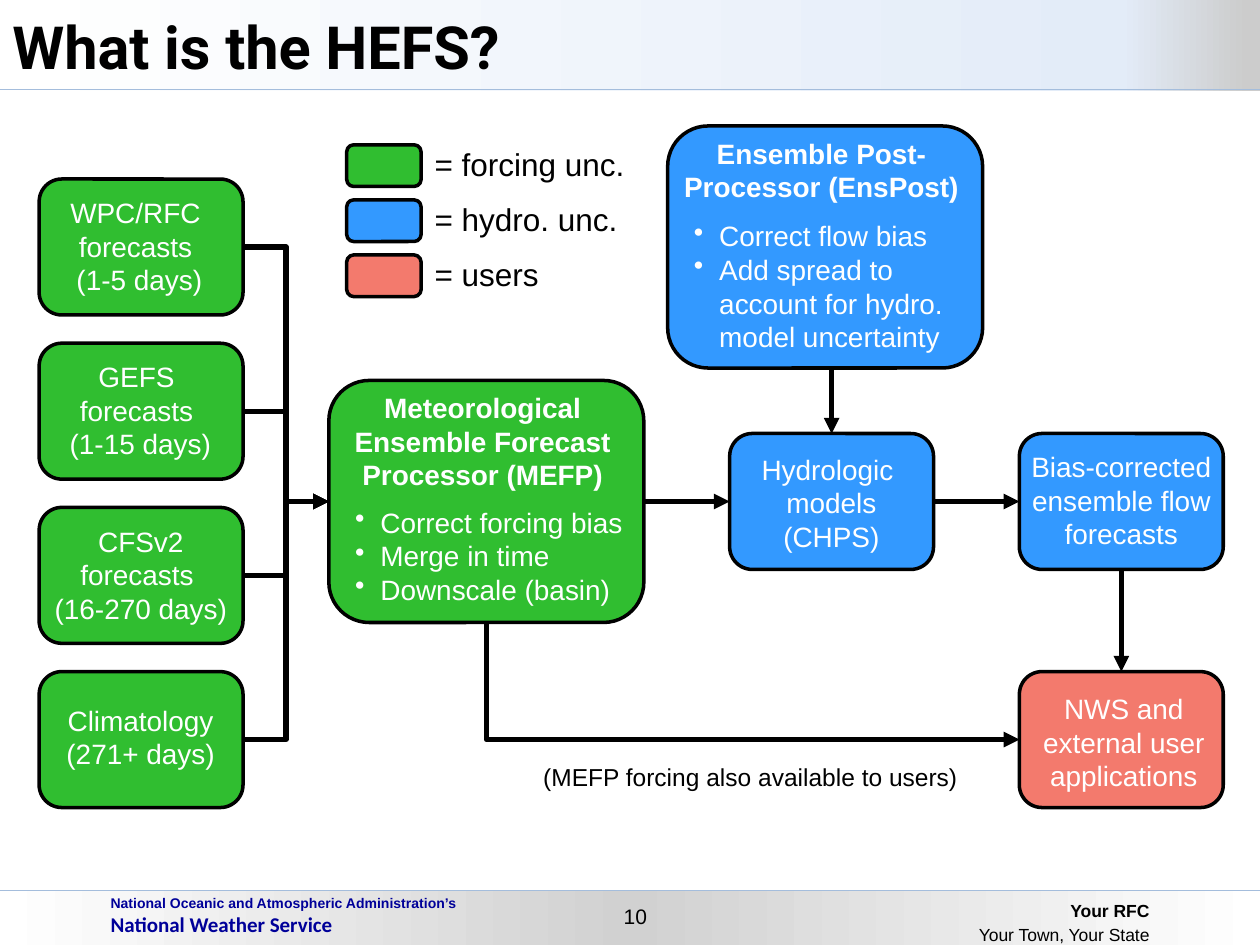
from copy import deepcopy

from lxml.etree import SubElement
from pptx import Presentation
from pptx.dml.color import RGBColor
from pptx.enum.shapes import MSO_CONNECTOR, MSO_SHAPE
from pptx.enum.text import MSO_ANCHOR, PP_ALIGN
from pptx.oxml.ns import qn
from pptx.util import Cm, Pt

COLORS = {
    "forcing": "30BE30", "hydro": "3399FF", "users": "F37A6D",
    "black": "000000", "white": "FFFFFF", "navy": "000099", "rule": "A4BDDC",
    "silver": "D1D1D1", "ice": "E3ECF8", "gray": "CCCCCC",
}
RGB = {name: RGBColor.from_string(value) for name, value in COLORS.items()}
LEFT, CENTER, RIGHT = PP_ALIGN.LEFT, PP_ALIGN.CENTER, PP_ALIGN.RIGHT

prs = Presentation()
prs.slide_width, prs.slide_height = Cm(25.4), Cm(19.05)
slide = prs.slides.add_slide(prs.slide_layouts[6])
shapes = slide.shapes


def add_node(color, left, top, width=4.11, height=2.74):
    node = shapes.add_shape(MSO_SHAPE.ROUNDED_RECTANGLE, Cm(left), Cm(top), Cm(width), Cm(height))
    node.shadow.inherit = False
    node.fill.solid()
    node.fill.fore_color.rgb = RGB[color]
    node.line.color.rgb = RGB["black"]
    node.line.width = Pt(2)
    return node


def add_label(text, left, top, width, height, size=16, color="white", bold=False,
              align=CENTER, font="Arial", wrap=True, bullets=False):
    frame = shapes.add_textbox(Cm(left), Cm(top), Cm(width), Cm(height)).text_frame
    frame.word_wrap = wrap
    frame.text = text
    for paragraph in frame.paragraphs:
        paragraph.alignment = align
        if bullets:
            properties = paragraph._p.get_or_add_pPr()
            properties.set("marL", str(Cm(0.51)))
            properties.set("indent", str(-Cm(0.51)))
            SubElement(properties, qn("a:buChar")).set("char", "•")
        for run in paragraph.runs:
            run.font.name = font
            run.font.size = Pt(size)
            run.font.bold = bold
            run.font.color.rgb = RGB[color]
    return frame


bands = [
    (0, 1.83, 1.8, [(0, "white"), (0.89, "ice"), (0.99, "gray")]),
    (17.95, 1.1, 17.95, [(0, "white"), (0.5, "silver"), (1, "white")]),
]
for top, height, rule_y, stops in bands:
    band = shapes.add_shape(MSO_SHAPE.RECTANGLE, 0, Cm(top), prs.slide_width, Cm(height))
    band.shadow.inherit = False
    band.line.fill.background()
    band.fill.gradient()
    band.fill.gradient_angle = 0
    stop_list = band._element.xpath(".//a:gsLst")[0]
    stop_list.append(deepcopy(stop_list[0]))
    for stop, (position, color) in zip(band.fill.gradient_stops, stops):
        stop.position = position
        stop.color.rgb = RGB[color]
    rule = shapes.add_connector(MSO_CONNECTOR.STRAIGHT, prs.slide_width, Cm(rule_y), 0, Cm(rule_y))
    rule.line.color.rgb = RGB["rule"]
    rule.line.width = Pt(0.75)
    SubElement(rule._element.spPr, qn("a:effectLst"))

title = add_label("What is the HEFS?", 0, 0, 25.4, 1.83, 34, "black", True, LEFT, "Roboto")
title.vertical_anchor = MSO_ANCHOR.MIDDLE

agency = add_label("National Oceanic and Atmospheric Administration’s\nNational Weather Service",
                   1.98, 17.91, 8.46, 1.09, 8, "navy", True, LEFT)
service = agency.paragraphs[1].runs[0].font
service.name, service.size = "Calibri", Pt(12)
add_label("10", 12.29, 18.08, 1.04, 0.76, 12, "black", wrap=False)
office = add_label("Your RFC\nYour Town, Your State", 17.5, 17.95, 5.92, 1.12, 10, "black", align=RIGHT)
office.paragraphs[0].runs[0].font.bold = True
for paragraph in office.paragraphs:
    paragraph.line_spacing = 1.15

applications = add_node("users", 20.55, 13.54)
flow_forecasts = add_node("hydro", 20.55, 8.74)
hydro_models = add_node("hydro", 14.71, 8.74)
mefp = add_node("forcing", 6.63, 7.67, 6.35, 4.88)
enspost = add_node("hydro", 13.46, 2.54, 6.35, 4.88)

add_label("Hydrologic \nmodels (CHPS)", 14.88, 8.99, 3.76, 2.31)
add_label("Bias-corrected ensemble flow forecasts", 20.47, 8.94, 4.27, 2.31)
add_label("NWS and external user applications", 20.52, 13.82, 4.27, 2.31)
add_label("Meteorological Ensemble Forecast Processor (MEFP)", 6.63, 7.75, 6.2, 2.31, bold=True)
add_label("Correct forcing bias\nMerge in time\nDownscale (basin)",
          6.91, 10.06, 5.97, 2.31, align=LEFT, bullets=True)
add_label("Ensemble Post-Processor (EnsPost)", 13.46, 2.62, 6.2, 1.63, bold=True)
add_label("Correct flow bias\nAdd spread to account for hydro. model uncertainty",
          13.74, 4.29, 5.97, 3, align=LEFT, bullets=True)

links = []
feeds = [
    ("WPC/RFC \nforecasts \n(1-5 days)", 0.74, 0.21, 4.14),
    ("GEFS \nforecasts \n(1-15 days)", 0.86, 0.21, 3.94),
    ("CFSv2\nforecasts \n(16-270 days)", 0.81, 0.21, 4.06),
    ("Climatology\n(271+ days)", 0.89, 0.51, 3.89),
]
for row, (text, left, offset, width) in enumerate(feeds):
    top = 3.61 + 3.31 * row
    feed = add_node("forcing", 0.79, top)
    add_label(text, left, top + offset, width, 2.31)
    link = shapes.add_connector(MSO_CONNECTOR.ELBOW, 0, 0, 0, 0)
    link.begin_connect(feed, 3)
    link.end_connect(mefp, 1)
    links.append(link)

for source, source_side, target, target_side in [
    (mefp, 3, hydro_models, 1),
    (hydro_models, 3, flow_forecasts, 1),
    (flow_forecasts, 2, applications, 0),
]:
    link = shapes.add_connector(MSO_CONNECTOR.STRAIGHT, 0, 0, 0, 0)
    link.begin_connect(source, source_side)
    link.end_connect(target, target_side)
    links.append(link)

models_x = hydro_models.left + hydro_models.width // 2
correction = shapes.add_connector(MSO_CONNECTOR.STRAIGHT, models_x, enspost.top + enspost.height,
                                  models_x, hydro_models.top)
correction.end_connect(hydro_models, 0)
links.append(correction)

start_x, start_y = mefp.left + mefp.width // 2, mefp.top + mefp.height
end_x, end_y = applications.left, applications.top + applications.height // 2
middle_x, middle_y = (start_x + end_x) // 2, (start_y + end_y) // 2
half_run, half_drop = (end_x - start_x) // 2, (end_y - start_y) // 2
bypass = shapes.add_connector(MSO_CONNECTOR.ELBOW, middle_x + half_drop, middle_y - half_run,
                              middle_x - half_drop, middle_y + half_run)
bypass._element.spPr.xfrm.set("rot", "16200000")
bypass._element.spPr.prstGeom.set("prst", "bentConnector2")
links.append(bypass)

for link in links:
    link.line.color.rgb = RGB["black"]
    link.line.width = Pt(3)
    SubElement(link._element.spPr.find(qn("a:ln")), qn("a:tailEnd")).set("type", "triangle")
    SubElement(link._element.spPr, qn("a:effectLst"))

add_label("(MEFP forcing also available to users)", 10.67, 15.24, 8.92, 0.86, 14, "black", wrap=False)

for row, color in enumerate(["forcing", "hydro", "users"]):
    add_node(color, 6.99, 2.92 + 1.11 * row, 1.5, 0.84)
legend = add_label("= forcing unc.\n= hydro. unc.\n= users", 8.51, 2.79, 4.37, 3.28, 18, "black",
                   align=LEFT, wrap=False)
for paragraph in legend.paragraphs[1:]:
    paragraph.space_before = Pt(10)

prs.save("out.pptx")
